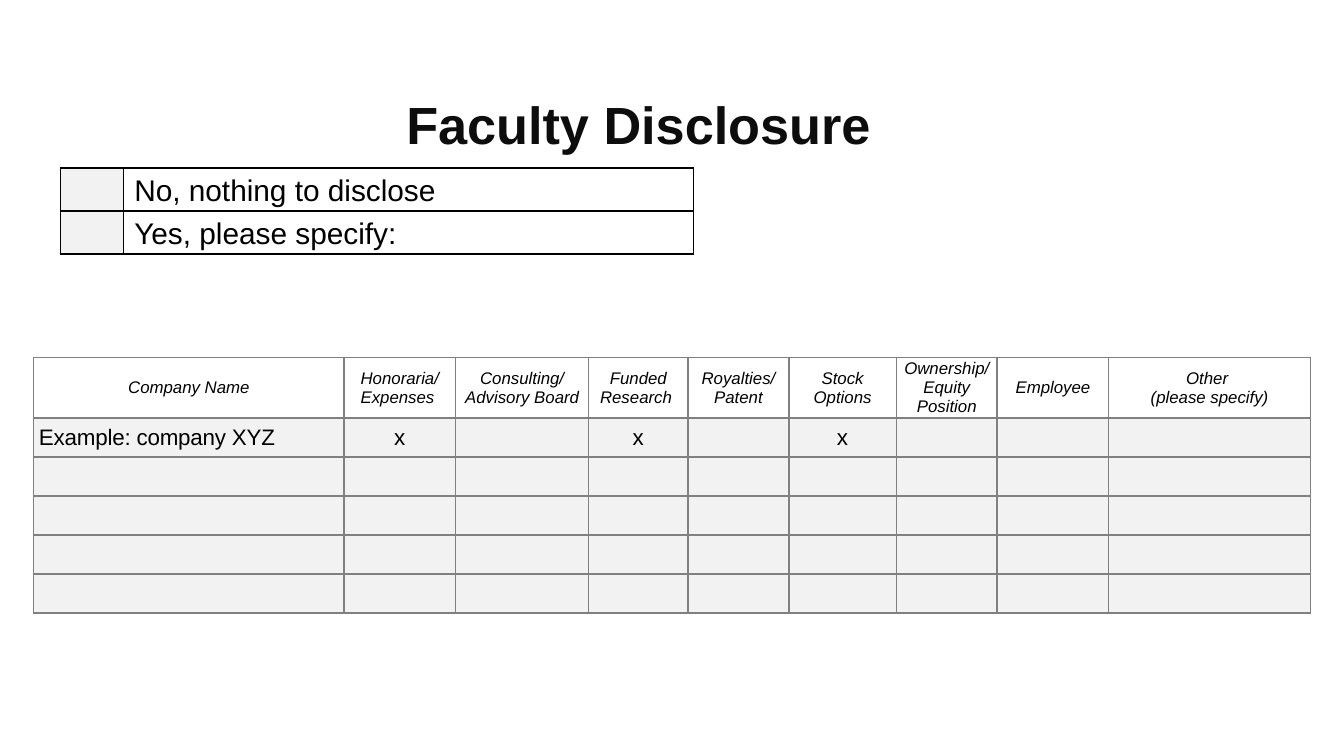
"""Build a faculty disclosure slide with an answer table and a relationship table."""
from dataclasses import dataclass

from lxml import etree
from pptx import Presentation
from pptx import util as u
from pptx.dml.color import RGBColor
from pptx.enum import text
from pptx.oxml import ns


@dataclass(frozen=True)
class Theme:
    font: str = "Arial"
    title: str = "0D0D0D"
    ink: str = "000000"
    grid: str = "808080"
    shade: str = "F2F2F2"
    title_size: float = 28
    answer_size: float = 16
    body_size: float = 12
    head_size: float = 9


@dataclass(frozen=True)
class Grid:
    left: float
    top: float
    cols: list[float]
    rows: list[float]
    border: str
    margins: tuple[float, float, float, float]


T = Theme()
CENTER = text.PP_ALIGN.CENTER
MIDDLE = text.MSO_ANCHOR.MIDDLE
TOP = text.MSO_ANCHOR.TOP

ANSWERS = ["No, nothing to disclose", "Yes, please specify:"]
HEADINGS = [
    "Company Name", "Honoraria/\nExpenses ", "Consulting/ Advisory Board",
    "Funded Research ", "Royalties/ Patent", "Stock Options",
    "Ownership/ Equity Position", "Employee", "Other \n(please specify)",
]
EXAMPLE = ["Example: company XYZ\u00a0", "x", "", "x", "", "x", "", "", ""]
BLANK_ROWS = 4

ANSWER_GRID = Grid(0.45, 1.25, [0.47, 4.24], [0.32] * 2, T.ink, (0.08, 0.01, 0.08, 0))
COMPANY_GRID = Grid(
    0.25, 2.66, [2.31, 0.83, 0.99, 0.74, 0.75, 0.8, 0.75, 0.83, 1.5],
    [0.45] + [0.29] * (BLANK_ROWS + 1), T.grid, (0.04, 0, 0.04, 0),
)


def write(tf, words: str, *, size: float, color: str = T.ink, bold: bool = False,
          italic: bool = False, align=None, spacing: float | None = None,
          tracking: float = 0) -> None:
    for i, line in enumerate(words.split("\n")):
        p = tf.paragraphs[0] if i == 0 else tf.add_paragraph()
        p.alignment = align
        p.line_spacing = spacing
        if not line:
            end = etree.SubElement(p._p, ns.qn("a:endParaRPr"), sz=str(int(size * 100)))
            etree.SubElement(end, ns.qn("a:latin"), typeface=T.font)
            continue
        r = p.add_run()
        r.text = line
        r.font.name, r.font.size = T.font, u.Pt(size)
        r.font.bold, r.font.italic = bold, italic
        r.font.color.rgb = RGBColor.from_string(color)
        if tracking:
            r._r.get_or_add_rPr().set("spc", str(round(tracking * 100)))


def add_borders(cell, color: str) -> None:
    pr = cell._tc.get_or_add_tcPr()
    for i, side in enumerate(("lnL", "lnR", "lnT", "lnB")):
        ln = etree.Element(ns.qn(f"a:{side}"), w=str(u.Pt(1)))
        fill = etree.SubElement(ln, ns.qn("a:solidFill"))
        etree.SubElement(fill, ns.qn("a:srgbClr"), val=color)
        pr.insert(i, ln)


def add_grid(s, grid: Grid):
    frame = s.shapes.add_table(
        len(grid.rows), len(grid.cols), u.Inches(grid.left), u.Inches(grid.top),
        u.Inches(sum(grid.cols)), u.Inches(sum(grid.rows)))
    table = frame.table
    table.first_row = table.horz_banding = False
    for col, width in zip(table.columns, grid.cols):
        col.width = u.Inches(width)
    for row, height in zip(table.rows, grid.rows):
        row.height = u.Inches(height)
    return table


def fill_cell(cell, words: str, grid: Grid, *, shaded: bool, anchor=MIDDLE, **style) -> None:
    cell.margin_left, cell.margin_top, cell.margin_right, cell.margin_bottom = map(
        u.Inches, grid.margins)
    cell.vertical_anchor = anchor
    if shaded:
        cell.fill.solid()
        cell.fill.fore_color.rgb = RGBColor.from_string(T.shade)
    else:
        cell.fill.background()
    add_borders(cell, grid.border)
    write(cell.text_frame, words, **style)


def add_title(s, words: str) -> None:
    sp = s.shapes.add_textbox(u.Inches(-0.25), u.Inches(0.59), u.Inches(10), u.Inches(0.83))
    tf = sp.text_frame
    tf.word_wrap = True
    tf.margin_left = tf.margin_top = tf.margin_right = tf.margin_bottom = u.Inches(0.1)
    write(tf, words, size=T.title_size, color=T.title, bold=True, align=CENTER)


def add_company_table(s) -> None:
    table = add_grid(s, COMPANY_GRID)
    rows = [HEADINGS, EXAMPLE] + [[""] * len(HEADINGS)] * BLANK_ROWS
    for i, row in enumerate(rows):
        head = i == 0
        for j, words in enumerate(row):
            fill_cell(table.cell(i, j), words, COMPANY_GRID, shaded=not head, italic=head,
                      size=T.head_size if head else T.body_size,
                      align=CENTER if head or j else None,
                      tracking=0 if head or j else -0.1)


def add_answer_table(s) -> None:
    table = add_grid(s, ANSWER_GRID)
    for i, answer in enumerate(ANSWERS):
        for j, words in enumerate(("", answer)):
            fill_cell(table.cell(i, j), words, ANSWER_GRID, shaded=j == 0, anchor=TOP,
                      size=T.answer_size, spacing=1.15)


def main() -> None:
    prs = Presentation()
    prs.slide_width, prs.slide_height = u.Inches(10), u.Inches(5.625)
    s = prs.slides.add_slide(prs.slide_layouts[6])
    add_title(s, "Faculty Disclosure")
    add_company_table(s)
    add_answer_table(s)
    prs.save("out.pptx")


if __name__ == "__main__":
    main()
